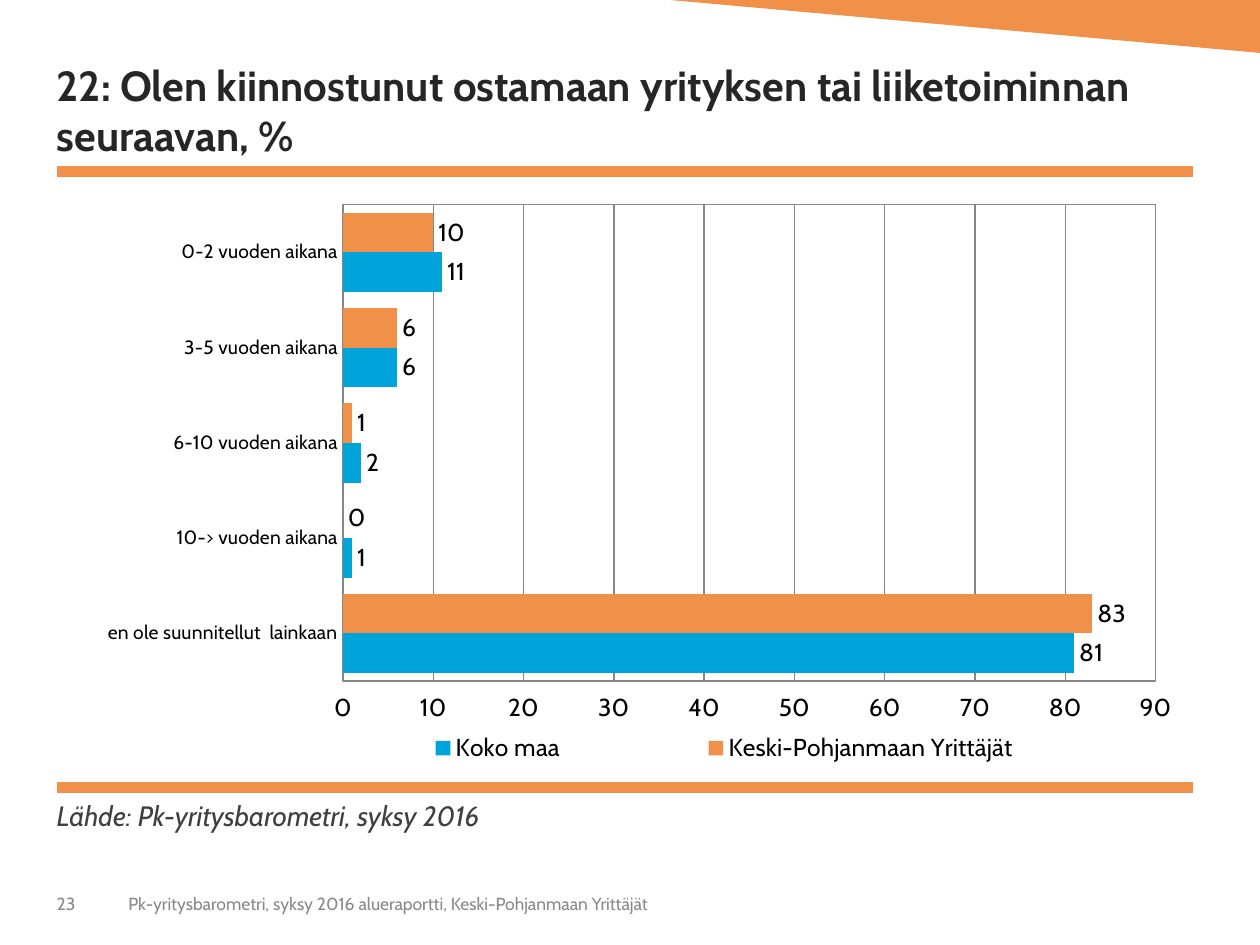
from lxml.etree import SubElement
from pptx import Presentation
from pptx.chart.data import CategoryChartData
from pptx.dml.color import RGBColor
from pptx.enum.chart import (XL_CHART_TYPE, XL_LABEL_POSITION, XL_LEGEND_POSITION,
                             XL_TICK_LABEL_POSITION, XL_TICK_MARK)
from pptx.enum.text import MSO_ANCHOR, MSO_AUTO_SIZE, PP_ALIGN
from pptx.oxml import parse_xml
from pptx.oxml.ns import nsdecls, qn
from pptx.util import Inches, Pt

TITLE = "22: Olen kiinnostunut ostamaan yrityksen tai liiketoiminnan seuraavan, %"
SOURCE = "Lähde: Pk-yritysbarometri, syksy 2016"
FOOTER = "Pk-yritysbarometri, syksy 2016 alueraportti, Keski-Pohjanmaan Yrittäjät"
NUMBER = "23"
CATS = ["0-2 vuoden aikana", "3-5 vuoden aikana", "6-10 vuoden aikana",
        "10-> vuoden aikana", "en ole suunnitellut  lainkaan"]
SERIES = [("Keski-Pohjanmaan Yrittäjät", [10, 6, 1, 0, 83], "accent"),
          ("Koko maa", [11, 6, 2, 1, 81], "blue")]

THEME = {
    "font": "Cabin",
    "accent": "F19048", "blue": "00A3DA", "grid": "868686", "black": "000000",
    "head": "262626", "note": "404040", "foot": "898989",
    "size": {"head": 24, "note": 16, "chart": 14, "cats": 11, "foot": 10},
}
WIDE, HIGH = 10, 7.5
LEFT, SPAN = 0.45, 9.02
NUM_WIDE = 0.47
FOOT_TOP, FOOT_HIGH = 6.97, 0.4
RULES = [1.36, 6.25]
PLOT = (0.252, 0.012, 0.715, 0.82)
LEGEND = (0.21, 0.91, 0.755, 0.075)


def color(name):
    return RGBColor.from_string(THEME[name])


def apply(item, values):
    for name, value in values.items():
        setattr(item, name, value)


def style(font, size, tint, **more):
    apply(font, {"name": THEME["font"], "size": Pt(THEME["size"][size]), **more})
    font.color.rgb = color(tint)


def place(shape, left, top, width, height):
    apply(shape, {"left": Inches(left), "top": Inches(top),
                  "width": Inches(width), "height": Inches(height)})


def write(shape, text, kind, anchor, inset, **more):
    """Fill a shape with one styled paragraph; inset is left, top, right, bottom."""
    frame = shape.text_frame
    sides = ("margin_left", "margin_top", "margin_right", "margin_bottom")
    apply(frame, {"word_wrap": True, "auto_size": MSO_AUTO_SIZE.NONE,
                  "vertical_anchor": anchor,
                  **dict(zip(sides, map(Inches, inset)))})
    para = frame.paragraphs[0]
    para.alignment = PP_ALIGN.LEFT
    run = para.add_run()
    run.text = text
    style(run.font, kind, kind, **more)


def label(slide, box, *args, **more):
    write(slide.shapes.add_textbox(*map(Inches, box)), *args, **more)


def fix_layout(part, box, inner=False):
    """Set a manual layout, in shares of the chart, on a plot area or legend."""
    for old in part.findall(qn("c:layout")):
        part.remove(old)
    outer = parse_xml(f"<c:layout {nsdecls('c')}/>")
    manual = SubElement(outer, qn("c:manualLayout"))
    pairs = [("layoutTarget", "inner")] if inner else []
    pairs += [("xMode", "edge"), ("yMode", "edge"), *zip("xywh", box)]
    for tag, value in pairs:
        SubElement(manual, qn(f"c:{tag}")).set("val", str(value))
    if inner:
        part.insert(0, outer)
    else:
        part.find(qn("c:legendPos")).addnext(outer)


def add_decor(slide):
    pen = slide.shapes.build_freeform(Inches(5.32), 0)
    pen.add_line_segments([(Inches(WIDE), 0), (Inches(WIDE), Inches(0.42))])
    wedge = pen.convert_to_shape()
    wedge.shadow.inherit = False
    wedge.fill.solid()
    wedge.fill.fore_color.rgb = color("accent")
    wedge.line.fill.background()
    for top in RULES:
        ends = map(Inches, (LEFT, top, LEFT + SPAN, top))
        rule = slide.shapes.add_connector(1, *ends)
        rule.line.color.rgb = color("accent")
        rule.line.width = Pt(6)
        SubElement(rule._element.spPr, qn("a:effectLst"))


def add_bars(slide):
    data = CategoryChartData(number_format="0")
    data.categories = CATS
    for name, values, _ in SERIES:
        data.add_series(name, values)
    box = map(Inches, (LEFT, 1.57, SPAN, 4.61))
    chart = slide.shapes.add_chart(XL_CHART_TYPE.BAR_CLUSTERED, *box, data).chart
    style(chart.font, "chart", "black")
    apply(chart, {"has_title": False, "has_legend": True})

    plot = chart.plots[0]
    apply(plot, {"gap_width": 40, "overlap": 0, "vary_by_categories": False})
    for series, (_, _, tint) in zip(plot.series, SERIES):
        series.format.fill.solid()
        series.format.fill.fore_color.rgb = color(tint)
        series.invert_if_negative = False
        labels = series.data_labels
        apply(labels, {"show_value": True, "number_format": "#,##0",
                       "number_format_is_linked": False,
                       "position": XL_LABEL_POSITION.OUTSIDE_END})
        style(labels.font, "chart", "black")

    cats, vals = chart.category_axis, chart.value_axis
    none = XL_TICK_MARK.NONE
    cats.reverse_order = True
    apply(vals, {"minimum_scale": 0, "maximum_scale": 90, "major_unit": 10,
                 "has_major_gridlines": True,
                 "tick_label_position": XL_TICK_LABEL_POSITION.HIGH})
    apply(vals.tick_labels, {"number_format": "0", "number_format_is_linked": False})
    for axis, size in ((cats, "cats"), (vals, "chart")):
        apply(axis, {"major_tick_mark": none, "minor_tick_mark": none})
        style(axis.tick_labels.font, size, "black")
        axis.format.line.color.rgb = color("grid")
    vals.major_gridlines.format.line.color.rgb = color("grid")

    legend = chart.legend
    apply(legend, {"position": XL_LEGEND_POSITION.RIGHT, "include_in_layout": False})
    style(legend.font, "chart", "black")
    fix_layout(legend._element, LEGEND)
    area = chart._chartSpace.chart.plotArea
    fix_layout(area, PLOT, inner=True)
    area.append(parse_xml(
        f'<c:spPr {nsdecls("c", "a")}><a:noFill/><a:ln w="9525"><a:solidFill>'
        f'<a:srgbClr val="{THEME["grid"]}"/></a:solidFill></a:ln></c:spPr>'))


def main():
    deck = Presentation()
    apply(deck, {"slide_width": Inches(WIDE), "slide_height": Inches(HIGH)})
    slide = deck.slides.add_slide(deck.slide_layouts.get_by_name("Title Only"))
    add_decor(slide)
    add_bars(slide)
    title = slide.shapes.title
    place(title, LEFT, 0.33, 9, 0.94)
    write(title, TITLE, "head", MSO_ANCHOR.BOTTOM, (0, 0, 0, 0), bold=True)
    label(slide, (LEFT, 6.29, SPAN, 0.43), SOURCE, "note", MSO_ANCHOR.TOP,
          (0, 0.05, 0, 0.05), italic=True)
    label(slide, (LEFT + NUM_WIDE, FOOT_TOP, 4.79, FOOT_HIGH), FOOTER, "foot",
          MSO_ANCHOR.MIDDLE, (0.1, 0.05, 0.1, 0.05))
    label(slide, (LEFT, FOOT_TOP, NUM_WIDE, FOOT_HIGH), NUMBER, "foot",
          MSO_ANCHOR.MIDDLE, (0, 0.05, 0.1, 0.05))
    deck.save("out.pptx")


if __name__ == "__main__":
    main()
